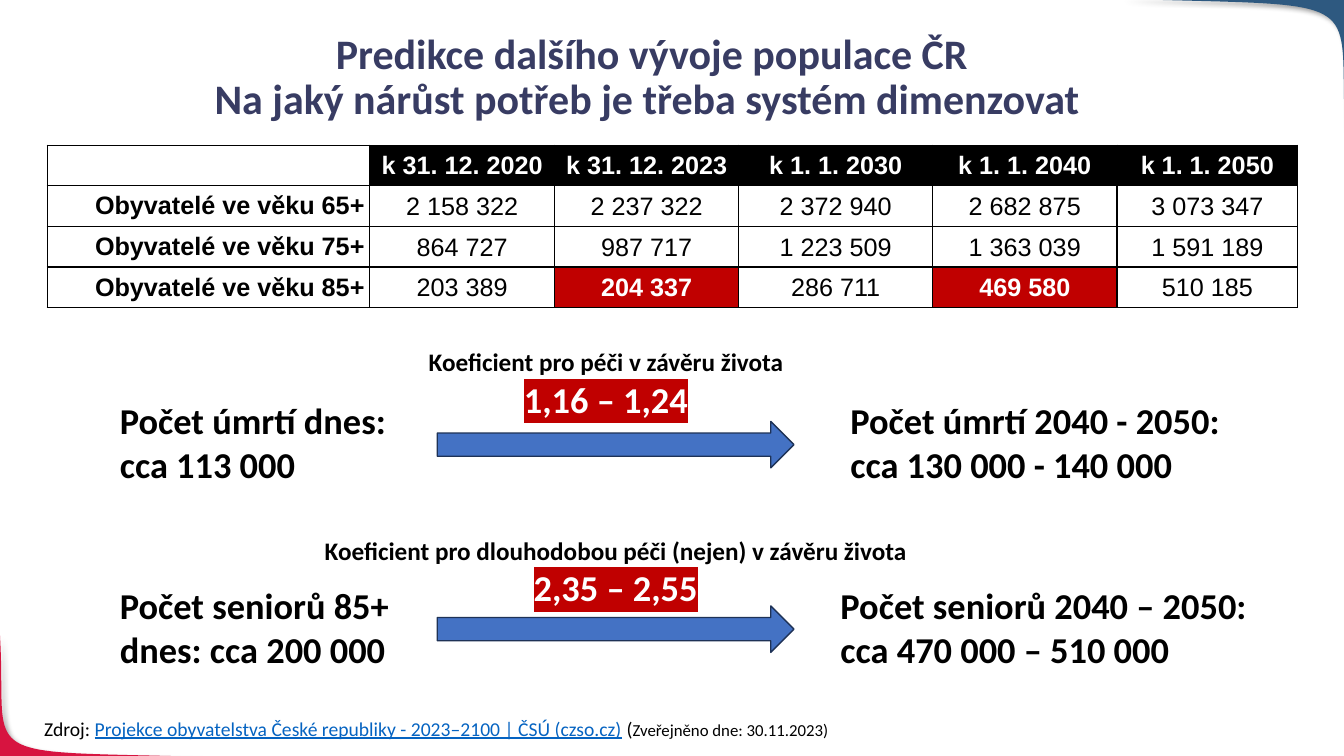
from lxml import etree
from pptx import Presentation
from pptx import util as u
from pptx.dml.color import RGBColor
from pptx.enum import shapes, text
from pptx.oxml import parse_xml
from pptx.oxml.ns import nsdecls, qn


def color(value):
    return RGBColor.from_string(value)


def add_text(page, place, lines, align=text.PP_ALIGN.LEFT):
    box = page.shapes.add_textbox(*[u.Cm(length) for length in place])
    frame = box.text_frame
    frame.word_wrap = True
    for index, spans in enumerate(lines):
        para = frame.paragraphs[0] if index == 0 else frame.add_paragraph()
        para.alignment = align
        for wording, size, bold, ink, highlight in spans:
            span = para.add_run()
            span.text = wording
            span.font.size = u.Pt(size)
            span.font.bold = bold
            span.font.color.rgb = color(ink)
            if highlight:
                mark = etree.SubElement(span.font._element, qn("a:highlight"))
                etree.SubElement(mark, qn("a:srgbClr")).set("val", highlight)
            span.font.name = "Calibri"
    return box


BLACK, WHITE, RED, NAVY, LINK = "000000", "FFFFFF", "C00000", "383C63", "0563C1"
CENTER = text.PP_ALIGN.CENTER

deck = Presentation()
deck.slide_width, deck.slide_height = u.Cm(33.87), u.Cm(19.05)
page = deck.slides.add_slide(deck.slide_layouts[6])

corners = [
    ("D71440", [(5.41, 19.08), (-0.86, 18.9), (0.2, 19.28), (0, 16)], (-0.03, 19.08)),
    ("2E5980", [(28.22, -0.03), (34.8, 0.18), (33.68, -0.25), (33.91, 3.61)], (33.91, -0.03)),
]
STEPS = 40
for fill, controls, tip in corners:
    points = []
    for step in range(STEPS + 1):
        t = step / STEPS
        weights = ((1 - t) ** 3, 3 * t * (1 - t) ** 2, 3 * t * t * (1 - t), t ** 3)
        points.append(tuple(
            u.Cm(sum(weight * point[axis] for weight, point in zip(weights, controls)))
            for axis in (0, 1)))
    points.append((u.Cm(tip[0]), u.Cm(tip[1])))
    builder = page.shapes.build_freeform(*points[0])
    builder.add_line_segments(points[1:], close=True)
    corner = builder.convert_to_shape()
    corner.fill.solid()
    corner.fill.fore_color.rgb = color(fill)
    corner.line.fill.background()
    corner._element.spPr.append(parse_xml(
        f'<a:effectLst {nsdecls("a")}><a:outerShdw blurRad="50800" dist="38100" '
        'dir="2700000" algn="tl" rotWithShape="0"><a:srgbClr val="000000">'
        '<a:alpha val="40000"/></a:srgbClr></a:outerShdw></a:effectLst>'))

title = add_text(page, (1.83, 0.71, 29.21, 4.17), [
    [("Predikce dalšího vývoje populace ČR", 30, True, NAVY, None)],
    [("Na jaký nárůst potřeb je třeba systém dimenzovat ", 30, True, NAVY, None)],
], CENTER)
for para in title.text_frame.paragraphs:
    para.line_spacing = 0.9

population = [
    ["", "k 31. 12. 2020", "k 31. 12. 2023", "k 1. 1. 2030", "k 1. 1. 2040", "k 1. 1. 2050"],
    ["Obyvatelé ve věku 65+", "2 158 322", "2 237 322", "2 372 940", "2 682 875", "3 073 347"],
    ["Obyvatelé ve věku 75+", "864 727", "987 717", "1 223 509", "1 363 039", "1 591 189"],
    ["Obyvatelé ve věku 85+", "203 389", "204 337", "286 711", "469 580", "510 185"],
]
highlighted = {(3, 2), (3, 4)}
widths = [8.13, 4.65, 4.65, 4.88, 4.65, 4.55]
row_height = 1.02
table = page.shapes.add_table(
    len(population), len(widths), u.Cm(1.19), u.Cm(3.66),
    u.Cm(sum(widths)), u.Cm(row_height * len(population))).table
table.first_row = table.horz_banding = False
for column, width in zip(table.columns, widths):
    column.width = u.Cm(width)
for row, values in enumerate(population):
    table.rows[row].height = u.Cm(row_height)
    for col, value in enumerate(values):
        cell = table.cell(row, col)
        header, label = row == 0 and col > 0, col == 0
        marked = (row, col) in highlighted
        properties = cell._tc.get_or_add_tcPr()
        for side in ("lnL", "lnR", "lnT", "lnB"):
            properties.append(parse_xml(
                f'<a:{side} {nsdecls("a")} w="12700"><a:solidFill>'
                f'<a:srgbClr val="{BLACK}"/></a:solidFill></a:{side}>'))
        cell.fill.solid()
        cell.fill.fore_color.rgb = color(BLACK if header else RED if marked else WHITE)
        cell.vertical_anchor = text.MSO_ANCHOR.MIDDLE
        margin = u.Cm(0.13 if label else 0.03)
        cell.margin_left = cell.margin_right = cell.margin_top = margin
        cell.margin_bottom = margin if label else 0
        para = cell.text_frame.paragraphs[0]
        para.text = value
        para.alignment = text.PP_ALIGN.RIGHT if label else CENTER
        para.font.size = u.Pt(18)
        for span in para.runs:
            span.font.name = "Arial"
            span.font.size = u.Pt(18)
            span.font.bold = header or label or marked
            span.font.color.rgb = color(WHITE if header or marked else BLACK)

forecasts = [
    ((2.77, 9.91, 8.59, 2.49), ["Počet úmrtí dnes:", "cca 113 000"],
     (21.18, 9.91, 10.52, 2.49), ["Počet úmrtí 2040 - 2050:", "cca 130 000 - 140 000"],
     (10.54, 8.61, 9.47, 2.13), "Koeficient pro péči v závěru života", "1,16 – 1,24", 10.62),
    ((2.77, 14.58, 10.13, 2.49), ["Počet seniorů 85+", "dnes: cca 200 000"],
     (20.93, 14.58, 12.07, 2.49), ["Počet seniorů 2040 – 2050:", "cca 470 000 – 510 000"],
     (7.29, 13.36, 16.46, 2.13), "Koeficient pro dlouhodobou péči (nejen) v závěru života",
     "2,35 – 2,55", 15.27),
]
for now_place, now, later_place, later, factor_place, caption, factor, arrow_top in forecasts:
    arrow = page.shapes.add_shape(
        shapes.MSO_SHAPE.RIGHT_ARROW, u.Cm(11.02), u.Cm(arrow_top), u.Cm(8.99), u.Cm(1.17))
    arrow.shadow.inherit = False
    arrow.fill.solid()
    arrow.fill.fore_color.rgb = color("4472C4")
    arrow.line.color.rgb = color("1E3256")
    arrow.line.width = u.Pt(1)
    for place, lines in ((now_place, now), (later_place, later)):
        add_text(page, place, [[(line, 26, True, BLACK, None)] for line in lines])
    add_text(page, factor_place, [
        [(caption, 18, True, BLACK, None)],
        [(factor, 26, True, WHITE, RED)],
    ], CENTER)

source = add_text(page, (0.86, 17.93, 31.8, 0.86), [[
    ("Zdroj: ", 14, False, BLACK, None),
    ("Projekce obyvatelstva České republiky - 2023–2100 | ČSÚ (czso.cz)", 14, False, LINK, None),
    (" (", 14, False, BLACK, None),
    ("Zveřejněno dne: 30.11.2023)", 12, False, BLACK, None),
]])
source.text_frame.paragraphs[0].runs[1].font.underline = True

deck.save("out.pptx")
